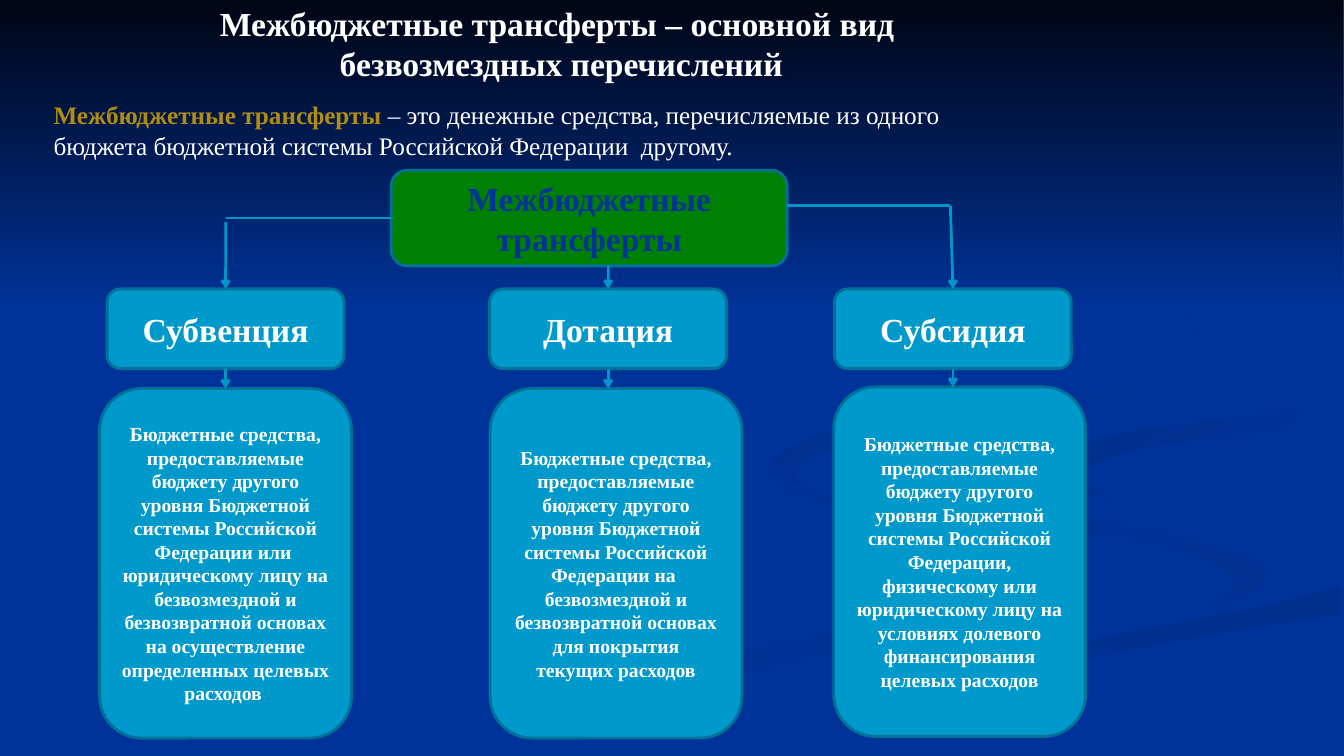
from dataclasses import dataclass
from lxml.etree import SubElement
from pptx import Presentation
from pptx.dml.color import RGBColor
from pptx.enum.shapes import MSO_CONNECTOR, MSO_SHAPE
from pptx.enum.text import MSO_ANCHOR, MSO_AUTO_SIZE, PP_ALIGN
from pptx.oxml.ns import qn
from pptx.util import Cm, Pt

NAVY = RGBColor(0x00, 0x33, 0x99)
MIDNIGHT = RGBColor(0x00, 0x05, 0x14)
SWIRL = RGBColor(0x00, 0x31, 0x93)
SHADE = RGBColor(0x00, 0x2F, 0x8D)
WHITE = RGBColor(0xFF, 0xFF, 0xFF)
GOLD = RGBColor(0xAF, 0x8C, 0x13)
GREEN = RGBColor(0x00, 0x80, 0x00)
CYAN = RGBColor(0x00, 0x99, 0xCC)
TEAL = RGBColor(0x00, 0x71, 0x97)
ARROW = RGBColor(0x00, 0x96, 0xC8)

TOP, LEFT, BOTTOM = 0, 1, 2
OUTLINE_UNIT = Cm(2.54) / 100
CURVE_STEPS = 6

ROOT_LEFT, ROOT_TOP, ROOT_WIDTH, ROOT_HEIGHT = 9.86, 4.29, 9.98, 2.41
ROOT_RIGHT, ROOT_BOTTOM = ROOT_LEFT + ROOT_WIDTH, ROOT_TOP + ROOT_HEIGHT
ROOT_MIDDLE = ROOT_TOP + ROOT_HEIGHT / 2
KIND_TOP, KIND_WIDTH, KIND_HEIGHT = 7.28, 5.97, 2.01
KIND_BOTTOM = KIND_TOP + KIND_HEIGHT
DETAIL_WIDTH, DETAIL_HEIGHT = 6.35, 8.81
RIGHT_BRANCH_X, RIGHT_BRANCH_Y = 23.95, 5.18
LEFT_BRANCH_GAP = 0.1

LEFT_SWIRL = [
    [(1042, 553), (953, 528), (835, 502), (777, 477), (767, 459)],
    [(767, 459), (760, 472), (791, 491), (872, 513), (970, 535), (1041, 556), (1048, 566),
     (1012, 590), (912, 613), (719, 649), (556, 690), (400, 749)],
    [(482, 749), (665, 687), (831, 647), (962, 623), (1039, 605), (1063, 588), (1061, 567),
     (1042, 553)],
]
RIGHT_SWIRL = [
    [(1257, 570), (1240, 553), (1160, 530), (1056, 509), (978, 483), (965, 464)],
    [(965, 464), (985, 494), (1041, 518), (1139, 539), (1200, 557), (1224, 581), (1191, 605)],
    [(1191, 605), (1243, 589), (1257, 570)],
]
LOWER_BAND = [
    [(671, 749), (762, 749)],
    [(762, 749), (865, 710), (1003, 672), (1147, 640), (1331, 609)],
    [(1331, 581), (1248, 602), (1109, 629), (928, 669), (759, 719), (671, 749)],
]
MAIN_BAND = [
    [(966, 464), (979, 483), (1057, 509), (1161, 530), (1242, 553), (1257, 570), (1234, 593),
     (1159, 611), (990, 643), (826, 684), (636, 749)],
    [(693, 747), (840, 693), (1021, 647), (1205, 610), (1332, 581)],
    [(1332, 538), (1205, 519), (1072, 485), (1042, 463), (1096, 434), (1244, 415), (1332, 402)],
    [(1332, 387), (1227, 401), (1051, 422), (977, 446), (966, 464)],
]
UPPER_BAND = [
    [(1042, 460), (1054, 478), (1101, 496)],
    [(1101, 496), (1073, 476), (1083, 462), (1145, 443), (1248, 429), (1331, 420)],
    [(1331, 402), (1198, 418), (1080, 437), (1042, 460)],
]
TOP_SWIRL = [
    [(911, 430), (1049, 412), (1139, 391), (1185, 362), (1186, 324), (1138, 283), (1066, 250),
     (1017, 233)],
    [(1017, 233), (1101, 266), (1159, 299), (1185, 335), (1159, 365), (1091, 386), (939, 409),
     (834, 426), (779, 446), (771, 468), (829, 500)],
    [(829, 500), (792, 475), (801, 456), (847, 440), (911, 430)],
]
NIGHT_SKY = [[(0, 0), (0, 308)], [(1333, 308), (1333, 0)]]

BACKDROP = [
    (LEFT_SWIRL, NAVY, SWIRL, 0),
    (RIGHT_SWIRL, NAVY, SWIRL, 45),
    (LOWER_BAND, SHADE, NAVY, 90),
    (MAIN_BAND, NAVY, NAVY, 0),
    (UPPER_BAND, SHADE, NAVY, 45),
    (TOP_SWIRL, SHADE, NAVY, 45),
    (NIGHT_SKY, MIDNIGHT, NAVY, 90),
]


@dataclass
class Transfer:
    name: str
    kind_left: float
    detail_left: float
    detail_top: float
    branch_x: float
    branch_y: float
    ending: str

    @property
    def center(self):
        return self.kind_left + KIND_WIDTH / 2

    @property
    def meaning(self):
        return ("Бюджетные средства, предоставляемые бюджету другого уровня "
                "Бюджетной системы Российской Федерации" + self.ending)


SUBVENTION = Transfer(
    "Субвенция", 2.7, 2.51, 9.79, 5.69, ROOT_MIDDLE + LEFT_BRANCH_GAP,
    " или  юридическому лицу на безвозмездной и безвозвратной основах "
    "на осуществление определенных целевых расходов ")
GRANT = Transfer(
    "Дотация", 12.34, 12.35, 9.79, 15.33, ROOT_BOTTOM,
    " на  безвозмездной и безвозвратной основах для покрытия текущих расходов")
SUBSIDY = Transfer(
    "Субсидия", 21.03, 21.01, 9.75, RIGHT_BRANCH_X, RIGHT_BRANCH_Y,
    ", физическому или юридическому лицу на условиях долевого "
    "финансирования целевых расходов")


def smooth_edge(knots):
    padded = [knots[0], *knots, knots[-1]]
    points = [knots[0]]
    for before, start, end, after in zip(padded, padded[1:], padded[2:], padded[3:]):
        for step in range(1, CURVE_STEPS + 1):
            t = step / CURVE_STEPS
            points.append(tuple(
                (2 * b + (c - a) * t + (2 * a - 5 * b + 4 * c - d) * t ** 2
                 + (3 * b - a - 3 * c + d) * t ** 3) / 2
                for a, b, c, d in zip(before, start, end, after)))
    return points


class TransferSlide:
    font_name = "Times New Roman"
    line_width = Pt(2)

    def __init__(self, slide):
        self.shapes = slide.shapes
        slide.background.fill.solid()
        slide.background.fill.fore_color.rgb = NAVY

    def style(self, font, size, color, bold):
        font.name = self.font_name
        font.size = Pt(size)
        font.color.rgb = color
        font.bold = bold

    def backdrop(self, edges, first, last, angle):
        outline = [point for edge in edges for point in smooth_edge(edge)]
        builder = self.shapes.build_freeform(*outline[0], scale=OUTLINE_UNIT)
        builder.add_line_segments(outline[1:], close=True)
        area = builder.convert_to_shape()
        area.shadow.inherit = False
        area.line.fill.background()
        area.fill.gradient()
        area.fill.gradient_angle = (360 - angle) % 360
        for stop, color in zip(area.fill.gradient_stops, (first, last)):
            stop.color.rgb = color

    def text(self, left, top, width, height, lines, size, align, wrap):
        frame = self.shapes.add_textbox(Cm(left), Cm(top), Cm(width), Cm(height)).text_frame
        frame.word_wrap = wrap
        frame.auto_size = MSO_AUTO_SIZE.SHAPE_TO_FIT_TEXT
        for index, runs in enumerate(lines):
            paragraph = frame.add_paragraph() if index else frame.paragraphs[0]
            paragraph.alignment = align
            for words, color, bold in runs:
                run = paragraph.add_run()
                run.text = words
                self.style(run.font, size, color, bold)

    def box(self, left, top, width, height, words, size, fill=CYAN, color=WHITE):
        box = self.shapes.add_shape(MSO_SHAPE.ROUNDED_RECTANGLE,
                                    Cm(left), Cm(top), Cm(width), Cm(height))
        box.shadow.inherit = False
        box.fill.solid()
        box.fill.fore_color.rgb = fill
        box.line.color.rgb = TEAL
        box.line.width = self.line_width
        box.text_frame.word_wrap = True
        box.text_frame.vertical_anchor = MSO_ANCHOR.MIDDLE
        paragraph = box.text_frame.paragraphs[0]
        paragraph.text = words
        paragraph.alignment = PP_ALIGN.CENTER
        self.style(paragraph.font, size, color, True)
        return box

    def link(self, x1, y1, x2, y2, begin=None, end=None, arrow=True):
        link = self.shapes.add_connector(MSO_CONNECTOR.STRAIGHT, Cm(x1), Cm(y1), Cm(x2), Cm(y2))
        if begin:
            link.begin_connect(*begin)
        if end:
            link.end_connect(*end)
        link.line.color.rgb = ARROW
        link.line.width = self.line_width
        properties = link._element.spPr
        if arrow:
            SubElement(properties.find(qn("a:ln")), qn("a:tailEnd"), type="arrow")
        SubElement(properties, qn("a:effectLst"))


def main():
    presentation = Presentation()
    presentation.slide_width, presentation.slide_height = Cm(33.87), Cm(19.05)
    page = TransferSlide(presentation.slides.add_slide(presentation.slide_layouts[6]))
    for area in BACKDROP:
        page.backdrop(*area)

    page.text(5.23, -0.05, 17.83, 3.3,
              [[("Межбюджетные трансферты – основной вид ", WHITE, True)],
               [("безвозмездных перечислений", WHITE, True)]], 24, PP_ALIGN.CENTER, False)
    page.text(1.1, 2.39, 23.14, 1.78,
              [[("Межбюджетные трансферты ", GOLD, True),
                ("– это денежные средства, перечисляемые из одного", WHITE, False)],
               [("бюджета бюджетной системы Российской Федерации  другому.", WHITE, False)]],
              18, PP_ALIGN.LEFT, True)

    root = page.box(ROOT_LEFT, ROOT_TOP, ROOT_WIDTH, ROOT_HEIGHT,
                    "Межбюджетные трансферты", 24, GREEN, NAVY)
    page.link(ROOT_LEFT, ROOT_MIDDLE, SUBVENTION.branch_x, ROOT_MIDDLE,
              begin=(root, LEFT), arrow=False)
    page.link(RIGHT_BRANCH_X, RIGHT_BRANCH_Y, ROOT_RIGHT, RIGHT_BRANCH_Y, arrow=False)

    for transfer in (SUBVENTION, GRANT, SUBSIDY):
        kind = page.box(transfer.kind_left, KIND_TOP, KIND_WIDTH, KIND_HEIGHT, transfer.name, 24)
        detail = page.box(transfer.detail_left, transfer.detail_top,
                          DETAIL_WIDTH, DETAIL_HEIGHT, transfer.meaning, 14)
        page.link(transfer.branch_x, transfer.branch_y, transfer.center, KIND_TOP,
                  end=(kind, TOP))
        page.link(transfer.center, KIND_BOTTOM, transfer.center, transfer.detail_top,
                  begin=(kind, BOTTOM),
                  end=(detail, TOP) if transfer is SUBVENTION else None)

    presentation.save("out.pptx")


if __name__ == "__main__":
    main()
